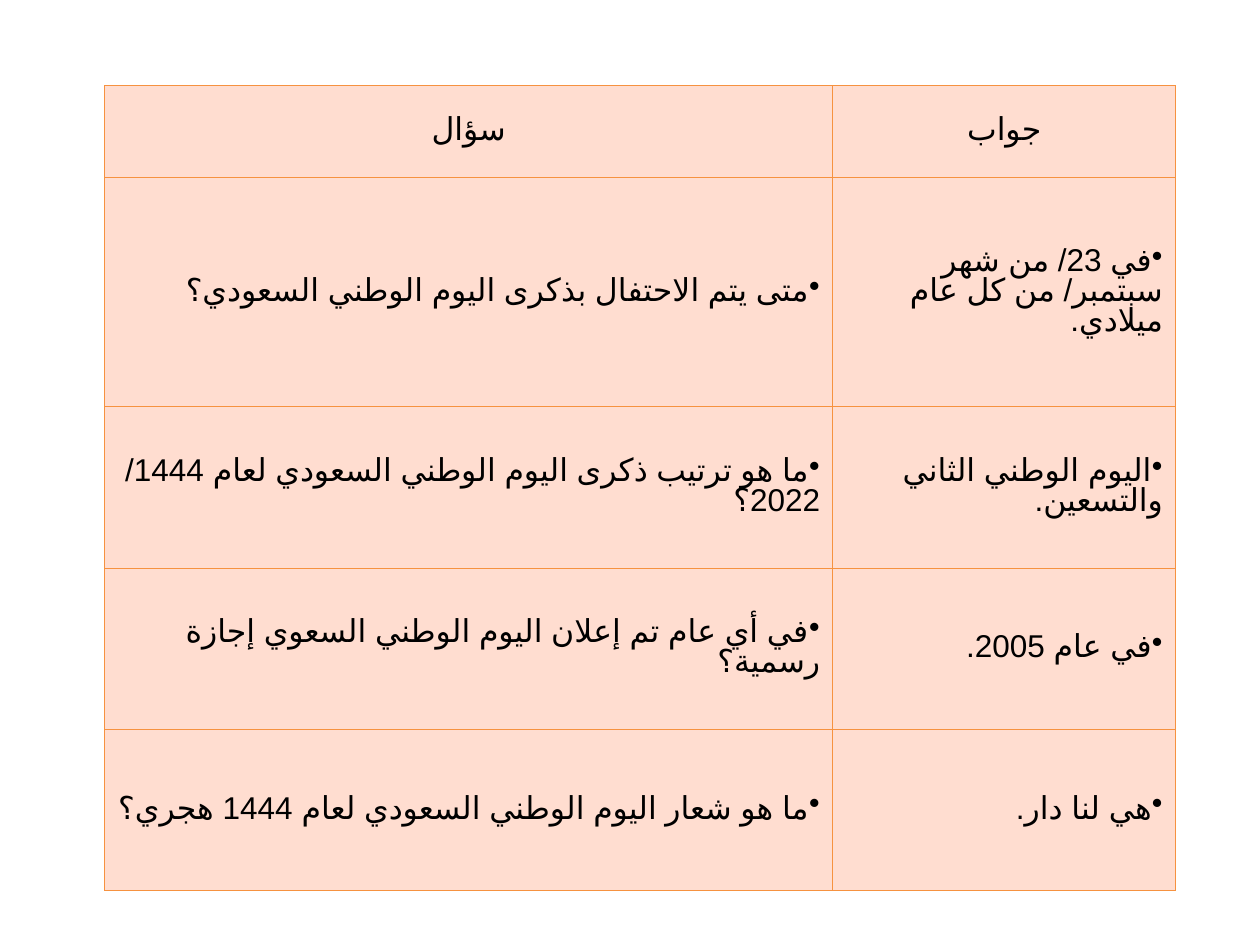
from lxml import etree
from pptx import Presentation
from pptx.dml.color import RGBColor
from pptx.enum.text import MSO_ANCHOR, PP_ALIGN
from pptx.oxml.ns import qn
from pptx.util import Inches, Pt

CENTER = PP_ALIGN.CENTER
RIGHT = PP_ALIGN.RIGHT
MIDDLE = MSO_ANCHOR.MIDDLE
PEACH = RGBColor(0xFF, 0xDD, 0xD0)
ORANGE = RGBColor(0xF6, 0x92, 0x40)
BLACK = RGBColor(0, 0, 0)

COLS = [5.78, 2.72]
ROWS = [0.73, 1.82, 1.28, 1.28, 1.28]
HEAD = ("سؤال", "جواب")
QUIZ = [
    ("متى يتم الاحتفال بذكرى اليوم الوطني السعودي؟",
     "في 23/ من شهر سبتمبر/ من كل عام ميلادي."),
    ("ما هو ترتيب ذكرى اليوم الوطني السعودي لعام 1444/ 2022؟",
     "اليوم الوطني الثاني والتسعين."),
    ("في أي عام تم إعلان اليوم الوطني السعوي إجازة رسمية؟",
     "في عام 2005."),
    ("ما هو شعار اليوم الوطني السعودي لعام 1444 هجري؟",
     "هي لنا دار."),
]


def add_borders(cell):
    props = cell._tc.get_or_add_tcPr()
    for side in ("lnL", "lnR", "lnT", "lnB"):
        line = etree.SubElement(props, qn(f"a:{side}"), w=str(Pt(0.75)))
        fill = etree.SubElement(line, qn("a:solidFill"))
        etree.SubElement(fill, qn("a:srgbClr"), val=str(ORANGE))


def style_run(run):
    run.font.size = Pt(18)
    run.font.name = "Calibri"
    run.font.color.rgb = BLACK
    props = run._r.get_or_add_rPr()
    props.set("lang", "ar-SA")
    etree.SubElement(props, qn("a:cs"), typeface="Arial")


def write_text(cell, text, align, bullet):
    cell.text_frame.text = text
    para = cell.text_frame.paragraphs[0]
    para.alignment = align
    para.line_spacing = 0.85
    props = para._p.get_or_add_pPr()
    props.set("rtl", "1")
    if bullet:
        etree.SubElement(props, qn("a:buChar"), char="•")
    style_run(para.runs[0])


def style_cell(cell):
    cell.vertical_anchor = MIDDLE
    add_borders(cell)
    cell.fill.solid()
    cell.fill.fore_color.rgb = PEACH


def add_quiz(slide):
    frame = slide.shapes.add_table(
        len(ROWS), len(COLS), Inches(0.83), Inches(0.68),
        Inches(sum(COLS)), Inches(sum(ROWS)))
    table = frame.table
    table.first_row = False
    table.horz_banding = False
    for col, width in zip(table.columns, COLS):
        col.width = Inches(width)
    for row, height in zip(table.rows, ROWS):
        row.height = Inches(height)
    for r, texts in enumerate([HEAD] + QUIZ):
        for c, text in enumerate(texts):
            cell = table.cell(r, c)
            style_cell(cell)
            write_text(cell, text, RIGHT if r else CENTER, r > 0)


def main():
    deck = Presentation()
    deck.slide_width = Inches(10)
    deck.slide_height = Inches(7.5)
    slide = deck.slides.add_slide(deck.slide_layouts[6])
    add_quiz(slide)
    deck.save("out.pptx")


if __name__ == "__main__":
    main()
